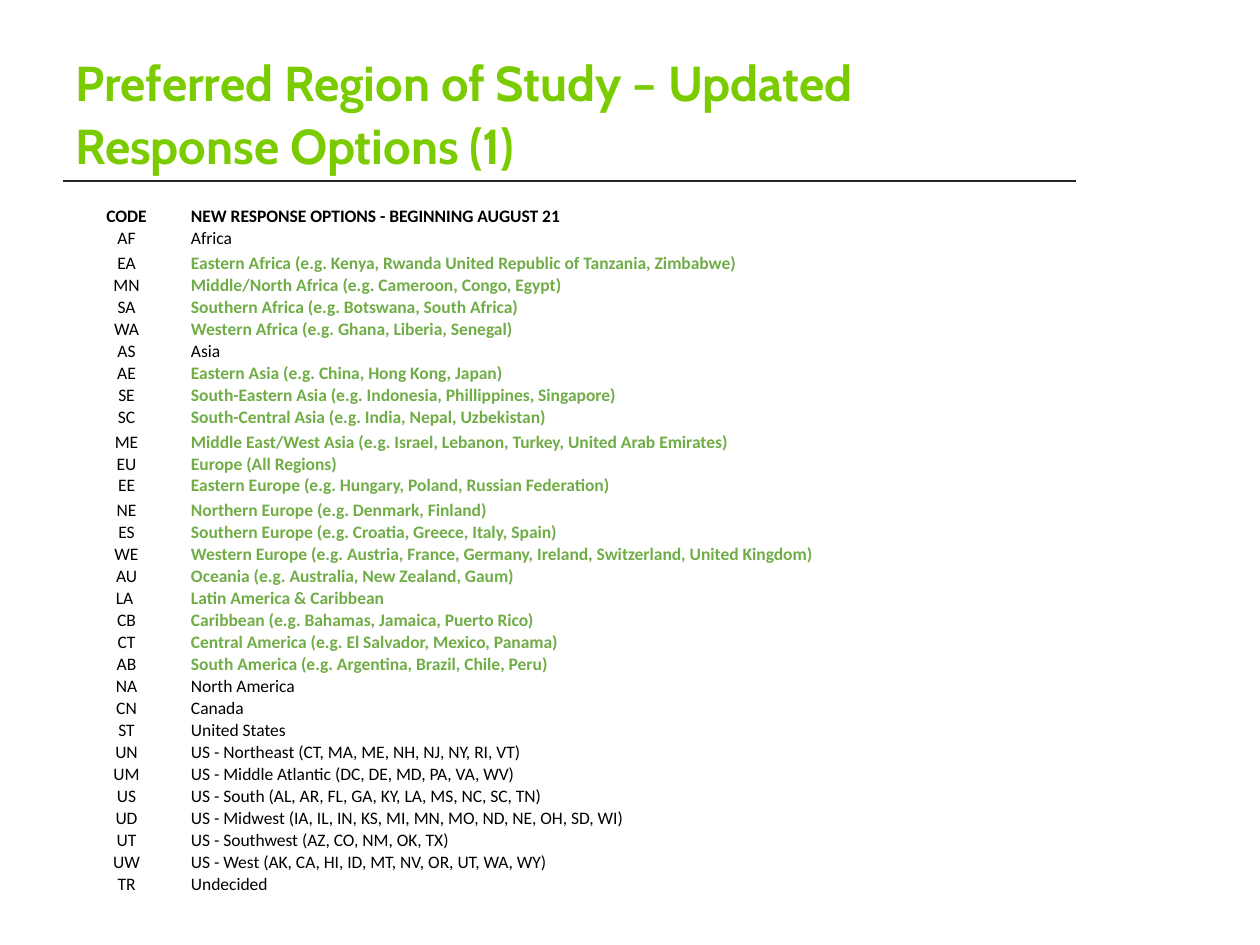
from lxml import etree
from pptx import Presentation
from pptx.dml.color import RGBColor
from pptx.enum.shapes import MSO_CONNECTOR
from pptx.enum.text import MSO_ANCHOR, PP_ALIGN
from pptx.oxml.ns import qn
from pptx.util import Emu, Pt

STRAIGHT = MSO_CONNECTOR.STRAIGHT
BOTTOM = MSO_ANCHOR.BOTTOM
LEFT, CENTER = PP_ALIGN.LEFT, PP_ALIGN.CENTER

EMU_PER_INCH = 914400
PX_PER_INCH = 126
COLORS = {"title": "7ACC00", "rule": "262626", "text": "000000", "new": "70AD47"}

CONTENT_LEFT, CONTENT_WIDTH = 63, 1013
CODE_WIDTH = 127
ROW_HEIGHT, TALL_ROW_HEIGHT = 22, 25
TALL_CODES = {"EA", "ME", "NE"}
UNCHANGED_CODES = {
    "AF", "AS", "NA", "CN", "ST", "UN", "UM", "US", "UD", "UT", "UW", "TR",
}

HEADER = ("CODE", "NEW RESPONSE OPTIONS - BEGINNING AUGUST 21")
OPTIONS = [
    ("AF", "Africa"),
    ("EA", "Eastern Africa (e.g. Kenya, Rwanda United Republic of Tanzania, Zimbabwe)"),
    ("MN", "Middle/North Africa (e.g. Cameroon, Congo, Egypt)"),
    ("SA", "Southern Africa (e.g. Botswana, South Africa)"),
    ("WA", "Western Africa (e.g. Ghana, Liberia, Senegal)"),
    ("AS", "Asia"),
    ("AE", "Eastern Asia (e.g. China, Hong Kong, Japan)"),
    ("SE", "South-Eastern Asia (e.g. Indonesia, Phillippines, Singapore)"),
    ("SC", "South-Central Asia (e.g. India, Nepal, Uzbekistan)"),
    ("ME", "Middle East/West Asia (e.g. Israel, Lebanon, Turkey, United Arab Emirates)"),
    ("EU", "Europe (All Regions)"),
    ("EE", "Eastern Europe (e.g. Hungary, Poland, Russian Federation)"),
    ("NE", "Northern Europe (e.g. Denmark, Finland)"),
    ("ES", "Southern Europe (e.g. Croatia, Greece, Italy, Spain)"),
    ("WE", "Western Europe (e.g. Austria, France, Germany, Ireland, Switzerland, United Kingdom)"),
    ("AU", "Oceania (e.g. Australia, New Zealand, Gaum)"),
    ("LA ", "Latin America & Caribbean"),
    ("CB", "Caribbean (e.g. Bahamas, Jamaica, Puerto Rico)"),
    ("CT", "Central America (e.g. El Salvador, Mexico, Panama)"),
    ("AB", "South America (e.g. Argentina, Brazil, Chile, Peru)"),
    ("NA", "North America"),
    ("CN", "Canada"),
    ("ST", "United States"),
    ("UN", "US - Northeast (CT, MA, ME, NH, NJ, NY, RI, VT)"),
    ("UM", "US - Middle Atlantic (DC, DE, MD, PA, VA, WV)"),
    ("US", "US - South (AL, AR, FL, GA, KY, LA, MS, NC, SC, TN)"),
    ("UD", "US - Midwest (IA, IL, IN, KS, MI, MN, MO, ND, NE, OH, SD, WI)"),
    ("UT", "US - Southwest (AZ, CO, NM, OK, TX)"),
    ("UW", "US - West (AK, CA, HI, ID, MT, NV, OR, UT, WA, WY)"),
    ("TR", "Undecided"),
]


def px(length):
    return Emu(round(length * EMU_PER_INCH / PX_PER_INCH))


def color(name):
    return RGBColor.from_string(COLORS[name])


def write_text(frame, text, *, font="Calibri", size=10, fill="text", bold=False,
               align=LEFT, spacing=None):
    para = frame.paragraphs[0]
    para.alignment = align
    if spacing:
        para.line_spacing = Pt(spacing)
    span = para.add_run()
    span.text = text
    span.font.name = font
    span.font.size = Pt(size)
    span.font.bold = bold
    span.font.color.rgb = color(fill)


def add_title(page, text):
    box = page.shapes.add_textbox(px(CONTENT_LEFT), px(44), px(CONTENT_WIDTH), px(137))
    frame = box.text_frame
    frame.word_wrap = True
    frame.vertical_anchor = BOTTOM
    write_text(frame, text, font="Cabin", size=28, fill="title", bold=True, spacing=36)


def add_rule(page, top):
    rule = page.shapes.add_connector(
        STRAIGHT, px(CONTENT_LEFT), px(top), px(CONTENT_LEFT + CONTENT_WIDTH), px(top))
    rule.line.color.rgb = color("rule")
    rule.line.width = Pt(1.5)
    etree.SubElement(rule._element.spPr, qn("a:effectLst"))


def fill_cell(cell, text, **text_format):
    cell.fill.background()
    cell.vertical_anchor = BOTTOM
    cell.margin_left = cell.margin_right = px(1)
    cell.margin_top = cell.margin_bottom = 0
    write_text(cell.text_frame, text, **text_format)


def add_options_table(page, top):
    rows = [HEADER, *OPTIONS]
    heights = [TALL_ROW_HEIGHT if code in TALL_CODES else ROW_HEIGHT for code, _ in rows]
    table = page.shapes.add_table(
        len(rows), 2, px(CONTENT_LEFT), px(top), px(CONTENT_WIDTH), px(sum(heights))).table
    table.first_row = table.horz_banding = False
    table.columns[0].width = px(CODE_WIDTH)
    table.columns[1].width = px(CONTENT_WIDTH - CODE_WIDTH)
    for index, (code, option) in enumerate(rows):
        is_header = index == 0
        is_new = not is_header and code not in UNCHANGED_CODES
        table.rows[index].height = px(heights[index])
        fill_cell(table.cell(index, 0), code, bold=is_header, align=CENTER)
        fill_cell(table.cell(index, 1), option, bold=is_header or is_new,
                  fill="new" if is_new else "text")


def main():
    deck = Presentation()
    deck.slide_width, deck.slide_height = px(1260), px(945)
    page = deck.slides.add_slide(deck.slide_layouts[6])
    add_rule(page, 181)
    add_title(page, "Preferred Region of Study – Updated Response Options (1)")
    add_options_table(page, 205)
    deck.save("out.pptx")


if __name__ == "__main__":
    main()
